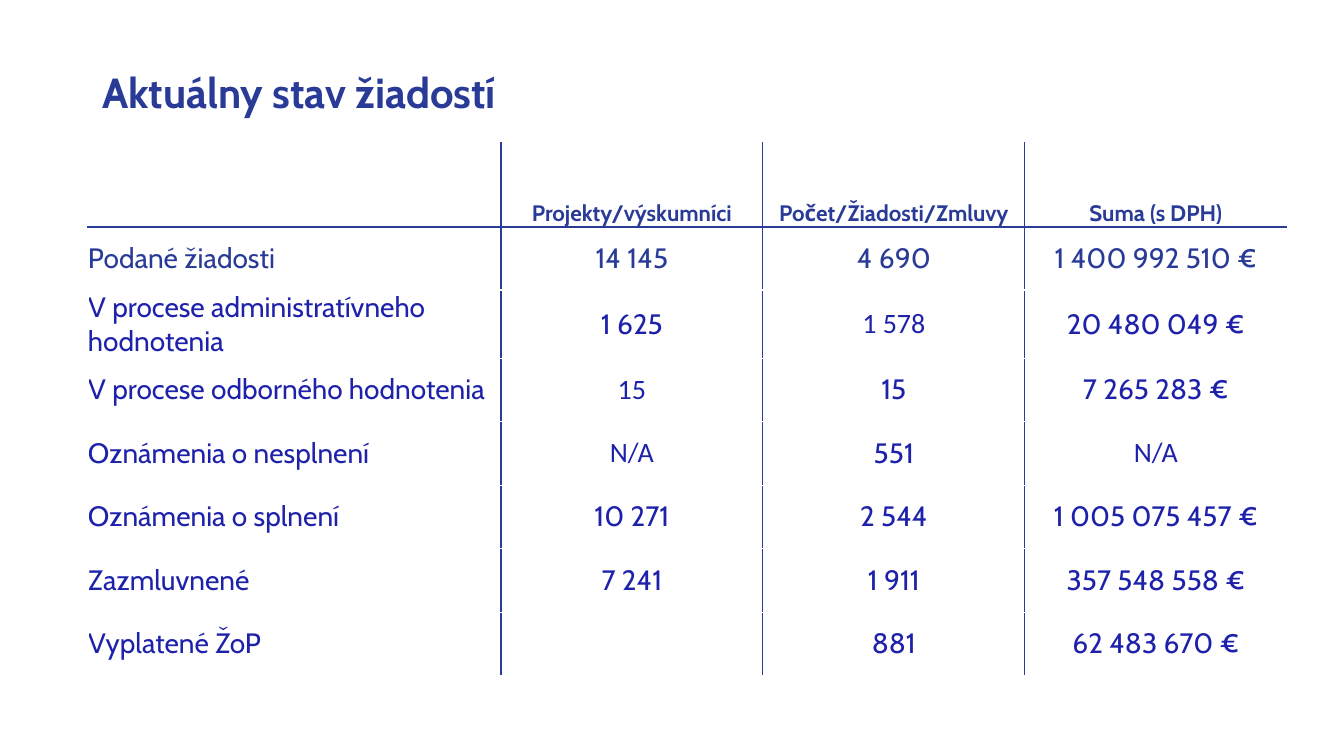
from lxml.etree import SubElement
from pptx import Presentation
from pptx.dml.color import RGBColor
from pptx.enum.text import MSO_ANCHOR, MSO_AUTO_SIZE, PP_ALIGN
from pptx.oxml.ns import qn
from pptx.util import Pt

EMU_PER_PX = 914400 / 100.8
COLORS = {"navy": "293B97", "blue": "1E22AA", "white": "FFFFFF"}
HEADERS = ["", "Projekty/výskumníci", "Počet/Žiadosti/Zmluvy", "Suma (s DPH)"]
ROWS = [
    ["Podané žiadosti", "14 145", "4 690", "1 400 992 510 €"],
    ["V procese administratívneho hodnotenia", "1 625", "1 578", "20 480 049 €"],
    ["V procese odborného hodnotenia", "15", "15", "7 265 283 €"],
    ["Oznámenia o nesplnení", "N/A", "551", "N/A"],
    ["Oznámenia o splnení", "10 271", "2 544", "1 005 075 457 €"],
    ["Zazmluvnené", "7 241", "1 911", "357 548 558 €"],
    ["Vyplatené ŽoP", "", "881", "62 483 670 €"],
]
CALIBRI_CELLS = {(2, 2), (3, 1), (4, 1), (4, 3)}


def px(n):
    return round(n * EMU_PER_PX)


class Deck:
    """Holds the style and the current slide, and adds its elements."""

    def __init__(self, prs):
        self.font = "Cabin"
        self.s = prs.slides.add_slide(prs.slide_layouts[5])

    def format(self, p, size, color, bold=False, font=None):
        for r in p.runs:
            r.font.name = font or self.font
            r.font.size = Pt(size)
            r.font.bold = bold
            r.font.color.rgb = RGBColor.from_string(COLORS[color])

    def title(self, text, x, y, w, h):
        sp = self.s.shapes.title
        sp.left, sp.top, sp.width, sp.height = px(x), px(y), px(w), px(h)
        tf = sp.text_frame
        tf.text = text
        tf.word_wrap = True
        tf.auto_size = MSO_AUTO_SIZE.NONE
        tf.vertical_anchor = MSO_ANCHOR.MIDDLE
        p = tf.paragraphs[0]
        p.alignment = PP_ALIGN.LEFT
        p.line_spacing = 0.9
        self.format(p, 30, "navy", bold=True)

    def borders(self, cell, **sides):
        tcPr = cell._tc.get_or_add_tcPr()
        for side, color in sides.items():
            ln = SubElement(tcPr, qn(f"a:ln{side}"), w=str(Pt(1)))
            fill = SubElement(ln, qn("a:solidFill"))
            SubElement(fill, qn("a:srgbClr"), val=COLORS[color])

    def cell(self, cell, text, row, col, last_col):
        cell.margin_left = cell.margin_right = 0
        cell.margin_top = cell.margin_bottom = 0
        cell.vertical_anchor = MSO_ANCHOR.MIDDLE if row else MSO_ANCHOR.BOTTOM
        self.borders(
            cell,
            L="navy" if col else "white",
            R="navy" if col < last_col else "white",
            T="navy" if row == 1 else "white",
            B="white" if row else "navy",
        )
        cell.fill.background()
        cell.text = text
        p = cell.text_frame.paragraphs[0]
        p.alignment = PP_ALIGN.CENTER if col else PP_ALIGN.LEFT
        font = "Calibri" if (row, col) in CALIBRI_CELLS else None
        self.format(p, 20 if row else 16, "blue" if row > 1 else "navy", not row, font)

    def table(self, data, x, y, widths, heights):
        frame = self.s.shapes.add_table(
            len(data), len(widths), px(x), px(y), px(sum(widths)), px(sum(heights))
        )
        table = frame.table
        table.first_row = table.horz_banding = False
        for column, w in zip(table.columns, widths):
            column.width = px(w)
        for i, (row, h) in enumerate(zip(data, heights)):
            table.rows[i].height = px(h)
            for j, text in enumerate(row):
                self.cell(table.cell(i, j), text, i, j, len(widths) - 1)


def main():
    prs = Presentation()
    prs.slide_width, prs.slide_height = px(1344), px(756)
    deck = Deck(prs)
    deck.title("Aktuálny stav žiadostí", 92, 62, 1190, 65)
    heights = [84] + [63 + i % 2 for i in range(len(ROWS))]
    deck.table([HEADERS] + ROWS, 88, 143, [413] + [262] * 3, heights)
    prs.save("out.pptx")


if __name__ == "__main__":
    main()
